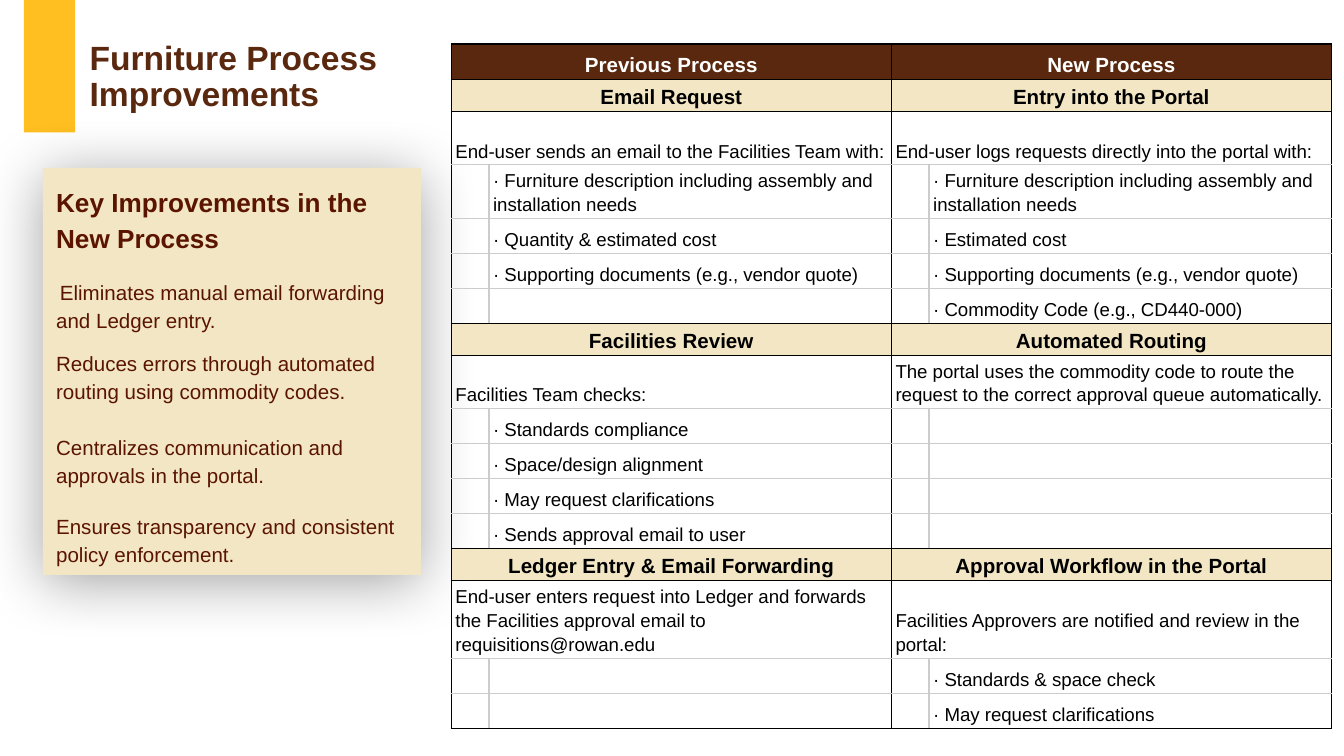
import pptx
import pptx.dml.color
import pptx.enum.shapes
import pptx.enum.text
import pptx.oxml.ns
import pptx.util
from lxml import etree

Pt = pptx.util.Pt
qn = pptx.oxml.ns.qn
ALIGN = pptx.enum.text.PP_ALIGN
ANCHOR = pptx.enum.text.MSO_ANCHOR

COLORS = {"gold": "FFBF21", "brown": "59280F", "maroon": "5A1400", "cream": "F2E6C4",
          "white": "FFFFFF", "black": "000000", "grid": "CCCCCC"}

HEIGHTS = {"header": 18.9, "section": 17.1, "intro": 28.7, "wide": 28.7, "item": 18.75, "long": 41.8}

FURNITURE = "· Furniture description including assembly and installation needs"
DOCUMENTS = "· Supporting documents (e.g., vendor quote)"
CLARIFY = "· May request clarifications"

PROCESS_ROWS = [
    ("header", "Previous Process", "New Process"),
    ("section", "Email Request", "Entry into the Portal"),
    ("intro", "End-user sends an email to the Facilities Team with:",
     "End-user logs requests directly into the portal with:"),
    ("wide", FURNITURE, FURNITURE),
    ("item", "· Quantity & estimated cost", "· Estimated cost"),
    ("item", DOCUMENTS, DOCUMENTS),
    ("item", "", "· Commodity Code (e.g., CD440-000)"),
    ("section", "Facilities Review", "Automated Routing"),
    ("intro", "Facilities Team checks:",
     "The portal uses the commodity code to route the request to the correct "
     "approval queue automatically."),
    ("item", "· Standards compliance", ""),
    ("item", "· Space/design alignment", ""),
    ("item", CLARIFY, ""),
    ("item", "· Sends approval email to user", ""),
    ("section", "Ledger Entry & Email Forwarding", "Approval Workflow in the Portal"),
    ("long", "End-user enters request into Ledger and forwards the Facilities "
     "approval email to requisitions@rowan.edu",
     "Facilities Approvers are notified and review in the portal:"),
    ("item", "", "· Standards & space check"),
    ("item", "", CLARIFY),
]

# text, space before
IMPROVEMENTS = [
    ("Eliminates manual email forwarding and Ledger entry.", 12),
    ("Reduces errors through automated routing using commodity codes.", 8),
    ("Centralizes communication and approvals in the portal.", 14.5),
    ("Ensures transparency and consistent policy enforcement.", 12),
]


def rgb(name):
    return pptx.dml.color.RGBColor.from_string(COLORS[name])


def write(p, text, size=10, color="black", bold=False, align=ALIGN.LEFT, line=1.15, before=0):
    p.alignment = align
    p.line_spacing = line
    p.space_before = Pt(before)
    if not text:
        etree.SubElement(p._p, qn("a:endParaRPr"), sz=str(size * 100))
        return
    r = p.add_run()
    r.text = text
    r.font.name = "Arial"
    r.font.size = Pt(size)
    r.font.bold = bold
    r.font.color.rgb = rgb(color)


def set_margins(frame, x, y):
    frame.margin_left = frame.margin_right = Pt(x)
    frame.margin_top = frame.margin_bottom = Pt(y)


def add_rect(slide, left, top, width, height, color):
    sp = slide.shapes.add_shape(pptx.enum.shapes.MSO_SHAPE.RECTANGLE,
                                Pt(left), Pt(top), Pt(width), Pt(height))
    sp.shadow.inherit = False
    sp.fill.solid()
    sp.fill.fore_color.rgb = rgb(color)
    sp.line.fill.background()
    return sp


def add_soft_shadow(sp):
    effects = sp._element.spPr.find(qn("a:effectLst"))
    shadow = etree.SubElement(effects, qn("a:outerShdw"), blurRad=str(Pt(32.6)),
                              dist=str(Pt(3.8)), dir="5400000", algn="t", rotWithShape="0")
    color = etree.SubElement(shadow, qn("a:srgbClr"), val=COLORS["black"])
    etree.SubElement(color, qn("a:alpha"), val="37000")


def add_title(slide):
    title = slide.shapes.title
    title.left, title.top, title.width, title.height = Pt(42.8), Pt(13), Pt(240), Pt(51)
    tf = title.text_frame
    tf.auto_size = pptx.enum.text.MSO_AUTO_SIZE.NONE
    tf.vertical_anchor = ANCHOR.BOTTOM
    set_margins(tf, 5.25, 3)
    for i, text in enumerate(["Furniture Process", "Improvements"]):
        p = tf.add_paragraph() if i else tf.paragraphs[0]
        write(p, text, size=18, color="brown", bold=True, line=0.9)


def add_improvements(slide):
    card = add_rect(slide, 23, 90, 202.5, 218, "cream")
    add_soft_shadow(card)
    tf = card.text_frame
    tf.word_wrap = True
    tf.vertical_anchor = ANCHOR.TOP
    set_margins(tf, 7.2, 7.2)
    write(tf.paragraphs[0], "Key Improvements in the New Process", size=14,
          color="maroon", bold=True)
    for text, before in IMPROVEMENTS:
        write(tf.add_paragraph(), text, size=11, color="maroon", before=before)
    tf.paragraphs[1]._p.get_or_add_pPr().set("indent", str(Pt(2)))


def set_borders(cell, left, right, top, bottom):
    tc_pr = cell._tc.get_or_add_tcPr()
    for tag, color in (("lnL", left), ("lnR", right), ("lnT", top), ("lnB", bottom)):
        ln = etree.SubElement(tc_pr, qn("a:" + tag), w=str(Pt(0.75)))
        fill = etree.SubElement(ln, qn("a:solidFill"))
        etree.SubElement(fill, qn("a:srgbClr"), val=COLORS[color])


def format_cell(cell, text, borders, fill=None, **style):
    set_borders(cell, *borders)
    if fill:
        cell.fill.solid()
        cell.fill.fore_color.rgb = rgb(fill)
    else:
        cell.fill.background()
    cell.vertical_anchor = ANCHOR.BOTTOM
    set_margins(cell, 2.2, 1.45)
    write(cell.text_frame.paragraphs[0], text, **style)


def fill_half(table, row, col, kind, text, closes_block):
    """Fill one process's two cells: merged, or an indent cell and an item."""
    first, second = table.cell(row, col), table.cell(row, col + 1)
    if kind in ("item", "wide"):
        bottom = "black" if closes_block else "grid"
        format_cell(first, "", ("black", "grid", "grid", bottom))
        format_cell(second, text, ("grid", "black", "grid", bottom))
        return
    first.merge(second)
    if kind in ("header", "section"):
        is_header = kind == "header"
        borders = ("black",) * 4
        style = dict(fill="brown" if is_header else "cream", size=11, bold=True,
                     color="white" if is_header else "black", align=ALIGN.CENTER)
    else:
        borders, style = ("black", "black", "black", "grid"), {}
    format_cell(first, text, borders, **style)
    format_cell(second, "", borders, **style)


def add_process_table(slide):
    widths = [20.2, 215.6] * 2
    heights = [HEIGHTS[kind] for kind, _, _ in PROCESS_ROWS]
    table = slide.shapes.add_table(len(heights), len(widths), Pt(241.8), Pt(23.6),
                                   Pt(sum(widths)), Pt(sum(heights))).table
    table.first_row = table.horz_banding = False
    for column, width in zip(table.columns, widths):
        column.width = Pt(width)
    next_kinds = [kind for kind, _, _ in PROCESS_ROWS[1:]] + ["section"]
    for i, (kind, previous, new) in enumerate(PROCESS_ROWS):
        table.rows[i].height = Pt(heights[i])
        for col, text in ((0, previous), (2, new)):
            fill_half(table, i, col, kind, text, next_kinds[i] == "section")


def main():
    prs = pptx.Presentation()
    prs.slide_width, prs.slide_height = Pt(720), Pt(405)
    slide = prs.slides.add_slide(prs.slide_layouts[5])
    add_rect(slide, 12.8, 0, 27.4, 71, "gold")
    add_title(slide)
    add_improvements(slide)
    add_process_table(slide)
    prs.save("out.pptx")


if __name__ == "__main__":
    main()
